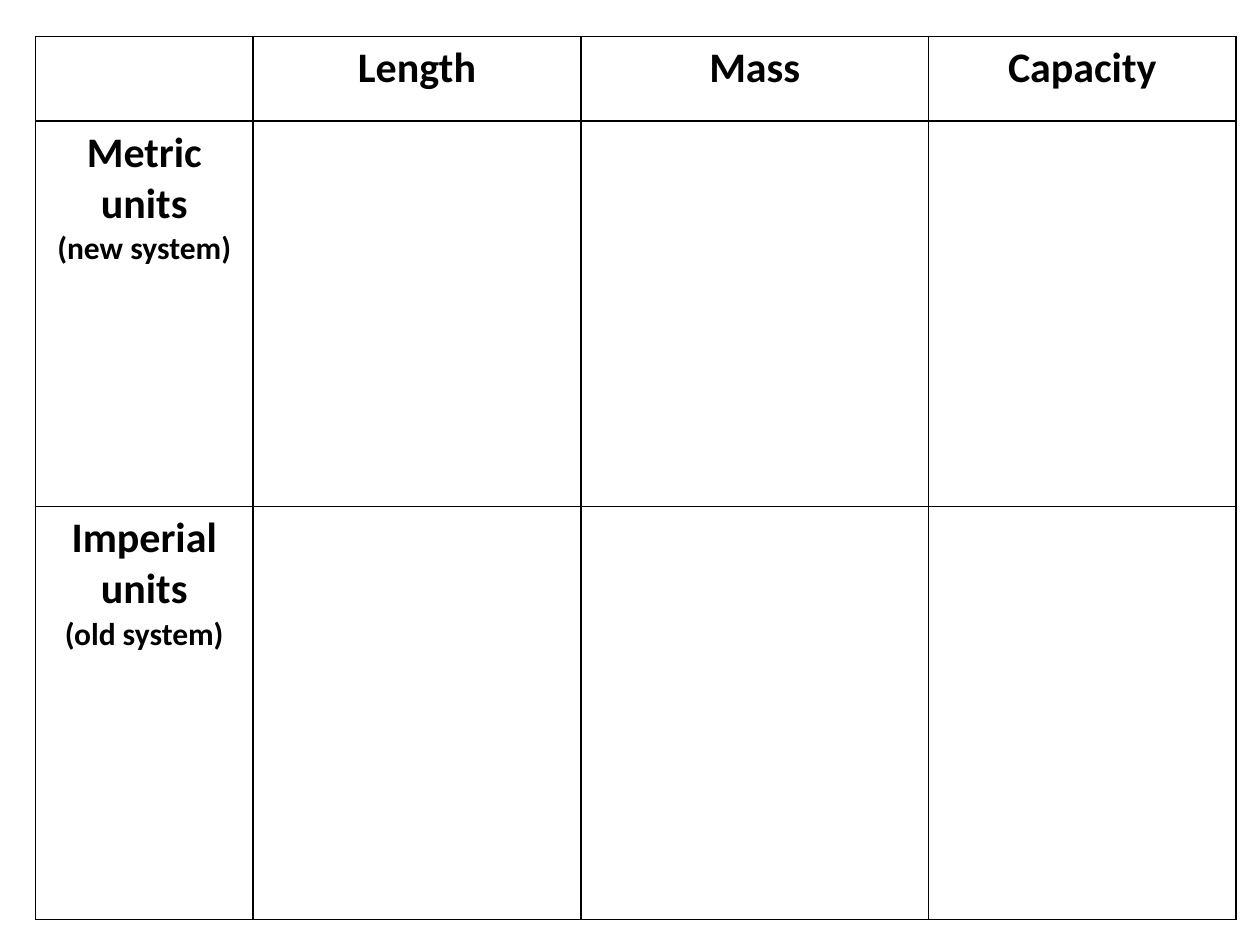
from dataclasses import dataclass

from lxml import etree
from pptx import Presentation
from pptx import util as u
from pptx.dml import color
from pptx.enum import text
from pptx.oxml import ns
from pptx.table import _Cell

COLORS = {"ink": "000000", "paper": "FFFFFF"}
FONT = "Calibri"
COLUMN_WIDTHS = [124.56, 187.2, 198.72, 175.68]
ROW_HEIGHTS = [48.24, 220.32, 236.16]
TABLE_LEFT, TABLE_TOP = 20.16, 20.88


@dataclass(frozen=True)
class Line:
    wording: str
    size: float = 24


@dataclass(frozen=True)
class Heading:
    row: int
    column: int
    lines: tuple[Line, ...]


HEADINGS = [
    Heading(0, 1, (Line("Length"),)),
    Heading(0, 2, (Line("Mass"),)),
    Heading(0, 3, (Line("Capacity"),)),
    Heading(1, 0, (Line("Metric units"), Line("(new system)", 18))),
    Heading(2, 0, (Line("Imperial units"), Line("(old system)", 18))),
]


def style_cell(cell: _Cell) -> None:
    properties = cell._tc.get_or_add_tcPr()
    for side in ("L", "R", "T", "B"):
        border = etree.SubElement(properties, ns.qn(f"a:ln{side}"), w=str(u.Pt(1)))
        fill = etree.SubElement(border, ns.qn("a:solidFill"))
        etree.SubElement(fill, ns.qn("a:srgbClr"), val=COLORS["ink"])
    cell.fill.solid()
    cell.fill.fore_color.rgb = color.RGBColor.from_string(COLORS["paper"])


def write_heading(cell: _Cell, heading: Heading) -> None:
    cell.text_frame.text = "\n".join(line.wording for line in heading.lines)
    for paragraph, line in zip(cell.text_frame.paragraphs, heading.lines):
        paragraph.alignment = text.PP_ALIGN.CENTER
        for run in paragraph.runs:
            run.font.name = FONT
            run.font.size = u.Pt(line.size)
            run.font.bold = True
            run.font.color.rgb = color.RGBColor.from_string(COLORS["ink"])


def main() -> None:
    presentation = Presentation()
    presentation.slide_width = u.Pt(720)
    presentation.slide_height = u.Pt(540)
    slide = presentation.slides.add_slide(presentation.slide_layouts[6])
    table = slide.shapes.add_table(
        len(ROW_HEIGHTS),
        len(COLUMN_WIDTHS),
        u.Pt(TABLE_LEFT),
        u.Pt(TABLE_TOP),
        u.Pt(sum(COLUMN_WIDTHS)),
        u.Pt(sum(ROW_HEIGHTS)),
    ).table
    for column, width in zip(table.columns, COLUMN_WIDTHS):
        column.width = u.Pt(width)
    for row, height in zip(table.rows, ROW_HEIGHTS):
        row.height = u.Pt(height)
    for cell in table.iter_cells():
        style_cell(cell)
    for heading in HEADINGS:
        write_heading(table.cell(heading.row, heading.column), heading)
    presentation.save("out.pptx")


if __name__ == "__main__":
    main()
